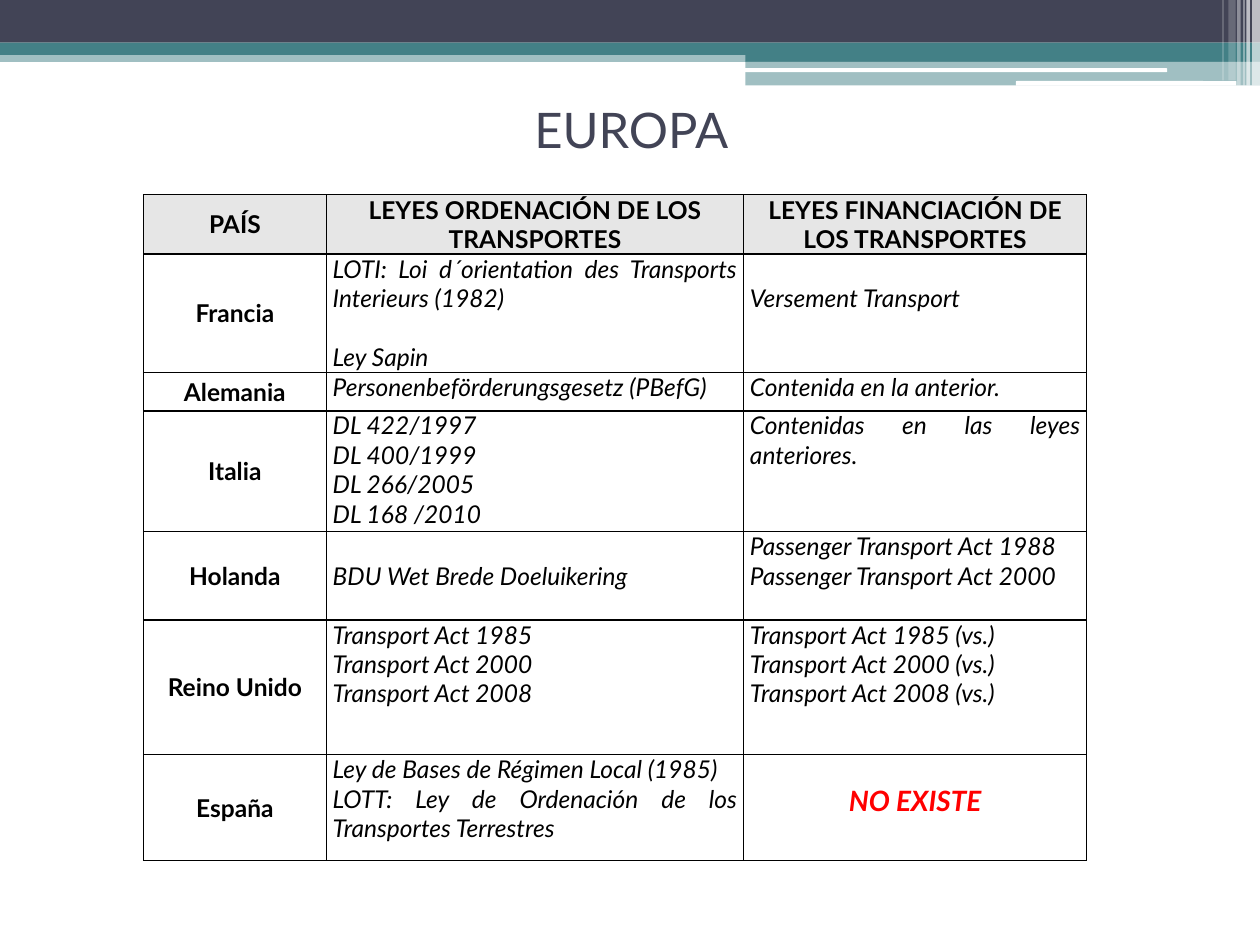
from lxml import etree
from pptx import Presentation
from pptx.dml.color import RGBColor
from pptx.enum.shapes import MSO_SHAPE
from pptx.enum.text import MSO_ANCHOR, PP_ALIGN
from pptx.oxml.ns import qn
from pptx.util import Pt

RECT, ROUND = MSO_SHAPE.RECTANGLE, MSO_SHAPE.ROUNDED_RECTANGLE
MIDDLE, TOP = MSO_ANCHOR.MIDDLE, MSO_ANCHOR.TOP
CENTER, JUSTIFY = PP_ALIGN.CENTER, PP_ALIGN.JUSTIFY
COLORS = {"navy": "424456", "teal": "438086", "white": "FFFFFF",
          "header": "E6E6E6", "black": "000000", "red": "FF0000"}
LINE_GAP = 16.8


def write_paragraph(paragraph, text, color, align, font_values):
    paragraph.alignment = align
    run = paragraph.add_run()
    run.text = text
    run.font.name = "Lato"
    run.font.color.rgb = RGBColor.from_string(COLORS[color])
    for name, value in font_values.items():
        setattr(run.font, name, value)


def add_borders(cell):
    properties = cell._tc.get_or_add_tcPr()
    for position, side in enumerate(("lnL", "lnR", "lnT", "lnB")):
        line = etree.Element(qn(f"a:{side}"), w=str(Pt(1)))
        fill = etree.SubElement(line, qn("a:solidFill"))
        etree.SubElement(fill, qn("a:srgbClr"), val=COLORS["black"])
        properties.insert(position, line)


presentation = Presentation()
presentation.slide_width, presentation.slide_height = Pt(720), Pt(540)
slide = presentation.slides.add_slide(presentation.slide_layouts[5])

# Top band: shape, left, top, width, height, colour, opacity in percent
band = [
    (RECT, 0, 28.8, 720, 6.6, "teal", 50),
    (RECT, 0, 0, 720, 24.4, "navy", 100),
    (RECT, 0, 24.4, 720, 7, "teal", 100),
    (RECT, 426, 28, 294, 7.3, "teal", 100),
    (RECT, 426, 34.8, 294, 14, "teal", 50),
    (ROUND, 425.5, 39, 241.5, 2.2, "white", 100),
    (ROUND, 580.5, 46.3, 126, 2.7, "white", 100),
    (RECT, 715.5, 0, 4.5, 49, "white", 65),
    (RECT, 712.2, 0, 2, 49, "white", 65),
    (RECT, 710.5, 0, 0.8, 49, "white", 60),
    (RECT, 707, 0, 2, 49, "white", 40),
    (RECT, 702, 0, 4.2, 46, "white", 20),
    (RECT, 698.5, 0, 0.7, 46, "white", 30),
]
for kind, left, top, width, height, color, opacity in band:
    shape = slide.shapes.add_shape(kind, Pt(left), Pt(top), Pt(width), Pt(height))
    shape.shadow.inherit = False
    shape.line.fill.background()
    shape.fill.solid()
    shape.fill.fore_color.rgb = RGBColor.from_string(COLORS[color])
    if opacity < 100:
        color_element = shape._element.spPr.find(f".//{qn('a:srgbClr')}")
        etree.SubElement(color_element, qn("a:alpha"), val=str(opacity * 1000))

# Title
title = slide.shapes.title
title.left, title.top, title.width, title.height = Pt(36.7), Pt(31.7), Pt(648), Pt(84.2)
title.text_frame.vertical_anchor = MIDDLE
write_paragraph(title.text_frame.paragraphs[0], "EUROPA", "navy", CENTER, {"size": Pt(28)})

# Table of transport laws: country, planning laws, funding laws
rows = [
    ("PAÍS", ["LEYES ORDENACIÓN DE LOS TRANSPORTES"], ["LEYES FINANCIACIÓN DE LOS TRANSPORTES"]),
    ("Francia", ["LOTI: Loi d´orientation des Transports Interieurs (1982)", "Ley Sapin"],
     ["Versement Transport"]),
    ("Alemania", ["Personenbeförderungsgesetz (PBefG)"], ["Contenida en la anterior."]),
    ("Italia", ["DL 422/1997", "DL 400/1999", "DL 266/2005", "DL 168 /2010"],
     ["Contenidas en las leyes anteriores."]),
    ("Holanda", ["BDU Wet Brede Doeluikering"],
     ["Passenger Transport Act 1988", "Passenger Transport Act 2000"]),
    ("Reino Unido", ["Transport Act 1985", "Transport Act 2000", "Transport Act 2008"],
     ["Transport Act 1985 (vs.)", "Transport Act 2000 (vs.)", "Transport Act 2008 (vs.)"]),
    ("España", ["Ley de Bases de Régimen Local (1985)",
                "LOTT: Ley de Ordenación de los Transportes Terrestres"], ["NO EXISTE"]),
]
column_widths = [104.5, 238.5, 196]
row_heights = [34, 67.5, 22, 69, 50.5, 77, 60.5]
lowered_texts = ("Versement Transport", "NO EXISTE")
middle_texts = ("BDU Wet Brede Doeluikering",)

table = slide.shapes.add_table(len(rows), len(column_widths), Pt(82), Pt(111.3),
                               Pt(sum(column_widths)), Pt(sum(row_heights))).table
table.first_row = table.horz_banding = False
for column, width in zip(table.columns, column_widths):
    column.width = Pt(width)
for row, height in zip(table.rows, row_heights):
    row.height = Pt(height)

for row_index, (country, planning, funding) in enumerate(rows):
    for column_index, lines in enumerate(([country], planning, funding)):
        cell = table.cell(row_index, column_index)
        heading = row_index == 0 or column_index == 0
        cell.margin_left = cell.margin_right = Pt(3.6)
        cell.margin_top = Pt(LINE_GAP if lines[0] in lowered_texts else 0)
        cell.margin_bottom = 0
        cell.vertical_anchor = MIDDLE if heading or lines[0] in middle_texts else TOP
        if row_index == 0:
            cell.fill.solid()
            cell.fill.fore_color.rgb = RGBColor.from_string(COLORS["header"])
        else:
            cell.fill.background()
        add_borders(cell)

        for line_index, text in enumerate(lines):
            frame = cell.text_frame
            paragraph = frame.paragraphs[0] if line_index == 0 else frame.add_paragraph()
            missing = text == "NO EXISTE"
            font_values = {"size": Pt(16 if missing else 14),
                           "bold": heading or missing, "italic": not heading}
            write_paragraph(paragraph, text, "red" if missing else "black",
                            CENTER if heading or missing else JUSTIFY, font_values)
            if text == "Ley Sapin":
                paragraph.space_before = Pt(LINE_GAP)

presentation.save("out.pptx")
